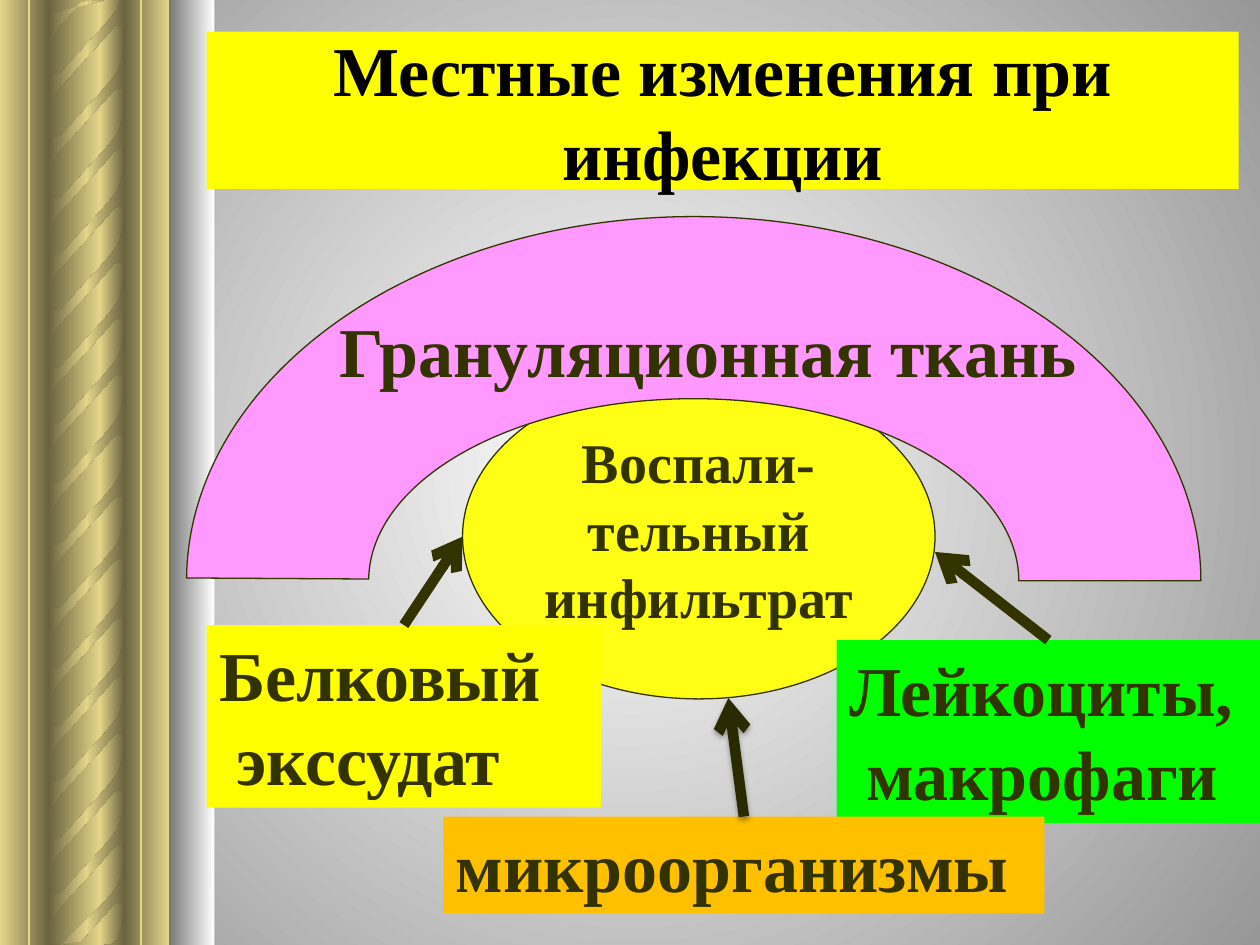
from dataclasses import dataclass

from lxml import etree
from pptx import Presentation
from pptx.dml.color import RGBColor
from pptx.enum import shapes, text
from pptx.oxml import ns
from pptx.util import Pt

SHAPE = shapes.MSO_SHAPE
ALIGN = text.PP_ALIGN
ANCHOR = text.MSO_ANCHOR


@dataclass(frozen=True)
class Theme:
    font: str = "Times New Roman"
    large: int = 40
    medium: int = 32
    black: str = "000000"
    ink: str = "333300"
    dark_ink: str = "2A2A00"
    yellow: str = "FFFF00"
    lemon: str = "FFFF15"
    green: str = "00FF00"
    orange: str = "FFC000"
    pink: str = "FF99FF"
    gold: str = "E5D58A"
    bronze: str = "6A6340"
    backdrop: tuple = ("FFFFFF", "979797")
    column_shade: tuple = ("767676", "FFFFFF")


def child(parent, tag, **attributes):
    element = etree.SubElement(parent, ns.qn(tag))
    for name, value in attributes.items():
        element.set(name, str(value))
    return element


class Painter:
    def __init__(self, page, theme):
        self.page = page
        self.theme = theme

    def gradient(self, owner, fill, colors):
        """Spread the colours evenly, left to right."""
        fill.gradient()
        fill.gradient_angle = 0
        grad = next(owner.element.iter(ns.qn("a:gradFill")))
        stops = grad.find(ns.qn("a:gsLst"))
        for stop in list(stops):
            stops.remove(stop)
        for index, color in enumerate(colors):
            position = index * 100000 // (len(colors) - 1)
            child(child(stops, "a:gs", pos=position), "a:srgbClr", val=color)
        return grad

    def background(self, colors):
        grad = self.gradient(self.page, self.page.background.fill, colors)
        grad.remove(grad.find(ns.qn("a:lin")))
        route = child(grad, "a:path", path="circle")
        child(route, "a:fillToRect", l=50000, t=50000, r=50000, b=50000)

    def finish(self, shape, fill, outline=None):
        shape.shadow.inherit = False
        if isinstance(fill, str):
            shape.fill.solid()
            shape.fill.fore_color.rgb = RGBColor.from_string(fill)
        else:
            self.gradient(shape, shape.fill, fill)
        if outline:
            shape.line.color.rgb = RGBColor.from_string(outline)
            shape.line.width = Pt(0.75)
        else:
            shape.line.fill.background()
        return shape

    def shape(self, kind, area, fill, outline=None):
        shape = self.page.shapes.add_shape(kind, *map(Pt, area))
        return self.finish(shape, fill, outline)

    def outline(self, points, fill):
        points = [(Pt(x), Pt(y)) for x, y in points]
        builder = self.page.shapes.build_freeform(*points[0])
        builder.add_line_segments(points[1:])
        return self.finish(builder.convert_to_shape(), fill)

    def put_text(self, box, lines, size=None, color=None, align=ALIGN.LEFT,
                 anchor=ANCHOR.TOP, indent=0):
        """Set one paragraph a line; lines after the first take the indent."""
        frame = box.text_frame
        frame_format = {"word_wrap": True, "vertical_anchor": anchor}
        for name, value in frame_format.items():
            setattr(frame, name, value)
        span_format = {"name": self.theme.font, "size": Pt(size or self.theme.large),
                       "bold": True}
        for index, line in enumerate(lines):
            para = frame.add_paragraph() if index else frame.paragraphs[0]
            para.alignment = align
            if index and indent:
                para._p.get_or_add_pPr().set("marL", str(Pt(indent)))
            span = para.add_run()
            span.text = line
            for name, value in span_format.items():
                setattr(span.font, name, value)
            span.font.color.rgb = RGBColor.from_string(color or self.theme.ink)
        return box

    def label(self, area, fill, lines, **style):
        return self.put_text(self.shape(SHAPE.RECTANGLE, area, fill), lines, **style)

    def caption(self, area, lines, **style):
        return self.put_text(self.page.shapes.add_textbox(*map(Pt, area)), lines, **style)

    def line(self, start, end, color, width):
        line = self.page.shapes.add_connector(
            shapes.MSO_CONNECTOR.STRAIGHT, *map(Pt, (*start, *end)))
        line.line.color.rgb = RGBColor.from_string(color)
        line.line.width = Pt(width)
        child(line.element.spPr, "a:effectLst")
        return line

    def arrow(self, box, end, color, shadow=False):
        """Point from the middle of the box's top side to the end."""
        start = ((box.left + box.width / 2) / Pt(1), box.top / Pt(1))
        arrow = self.line(start, end, color, 6)
        arrow.begin_connect(box, 0)
        properties = arrow.element.spPr
        child(properties.find(ns.qn("a:ln")), "a:tailEnd", type="arrow")
        if shadow:
            effect = child(properties.find(ns.qn("a:effectLst")), "a:outerShdw",
                           blurRad=Pt(3.1), dist=Pt(1.8), dir=5400000, rotWithShape=0)
            tint = child(effect, "a:srgbClr", val=self.theme.black)
            child(tint, "a:alpha", val=35000)


WIDTH, HEIGHT = 720, 540
STRIPE_LEFT = 28
STRIPE = [(43, 6.5), (43, 24.5), (42, 23.8), (39, 23.8), (37.5, 24.5), (35.5, 26.6),
          (30.5, 32.5), (18, 46), (6, 59.5), (3.5, 63.5), (1.5, 67), (0.5, 72.5),
          (0, 80.6), (0, 45.5), (0, 49), (0.5, 50.4), (2, 51.2), (3.6, 51.8),
          (5, 51.8), (7, 51), (31.5, 24), (37, 17.3), (39, 14.4), (40.5, 10.8),
          (42, 5), (43, 0)]
STRIPE_TOPS = [-44.6, -9.4, 26.6, 61.9, 94.3, 126, 158.4, 190.1, 224.6, 259.9,
               295.9, 329.8, 363.6, 395.3, 427.7, 459.4, 491.8, 522]


def draw_column(painter):
    theme = painter.theme
    falling = (theme.gold, theme.bronze)
    rising = falling[::-1]
    bands = [(57, 14, falling), (0, 28, falling), (28, 29, rising),
             (71, 25.5, rising), (96.5, 26, theme.column_shade)]
    for left, width, colors in bands:
        painter.shape(SHAPE.RECTANGLE, (left, 0, width, HEIGHT), colors)
    # Twisted stripes, cut at the page edges
    for top in STRIPE_TOPS:
        points = [(STRIPE_LEFT + x, min(max(top + y, 0), HEIGHT)) for x, y in STRIPE]
        painter.outline(points, (theme.bronze, theme.gold, theme.bronze))
    for x in (16.5, 80.6):
        painter.line((x, 0), (x, HEIGHT), theme.gold, 1)


def draw_diagram(painter):
    theme = painter.theme
    # Title
    painter.label((118.1, 18, 589.7, 90), theme.yellow, ["Местные изменения при инфекции"],
                  color=theme.black, align=ALIGN.CENTER, anchor=ANCHOR.MIDDLE)
    # Infiltrate and its components
    infiltrate = painter.shape(SHAPE.OVAL, (264.3, 213.8, 270, 185.6), theme.lemon, theme.ink)
    painter.put_text(infiltrate, ["Воспали-", "тельный", "инфильтрат"],
                     size=theme.medium, align=ALIGN.CENTER)
    exudate = painter.label((118.1, 357.2, 225.4, 104.4), theme.yellow,
                            ["Белковый", "экссудат"], indent=10)
    leukocytes = painter.label((478.1, 365.8, 241.9, 104.4), theme.green,
                               ["Лейкоциты,", "макрофаги"], indent=10)
    # Granulation tissue
    arc = painter.shape(SHAPE.BLOCK_ARC, (106.6, 123.8, 579.6, 416.2), theme.pink, theme.ink)
    for index, value in enumerate((108.19, 0, 0.25)):
        arc.adjustments[index] = value
    painter.caption((179.6, 172, 450, 55.4), ["Грануляционная ткань"], align=ALIGN.CENTER)
    microbes = painter.label((253.4, 466.6, 343.4, 55.4), theme.orange, ["микроорганизмы"])
    # Arrows
    painter.arrow(microbes, (416.2, 398.9), theme.dark_ink, shadow=True)
    painter.arrow(exudate, (264.3, 306.7), theme.ink)
    painter.arrow(leukocytes, (534.3, 315.4), theme.ink)


def main():
    deck = Presentation()
    deck.slide_width, deck.slide_height = Pt(WIDTH), Pt(HEIGHT)
    painter = Painter(deck.slides.add_slide(deck.slide_layouts[6]), Theme())
    painter.background(painter.theme.backdrop)
    draw_column(painter)
    draw_diagram(painter)
    deck.save("out.pptx")


if __name__ == "__main__":
    main()
